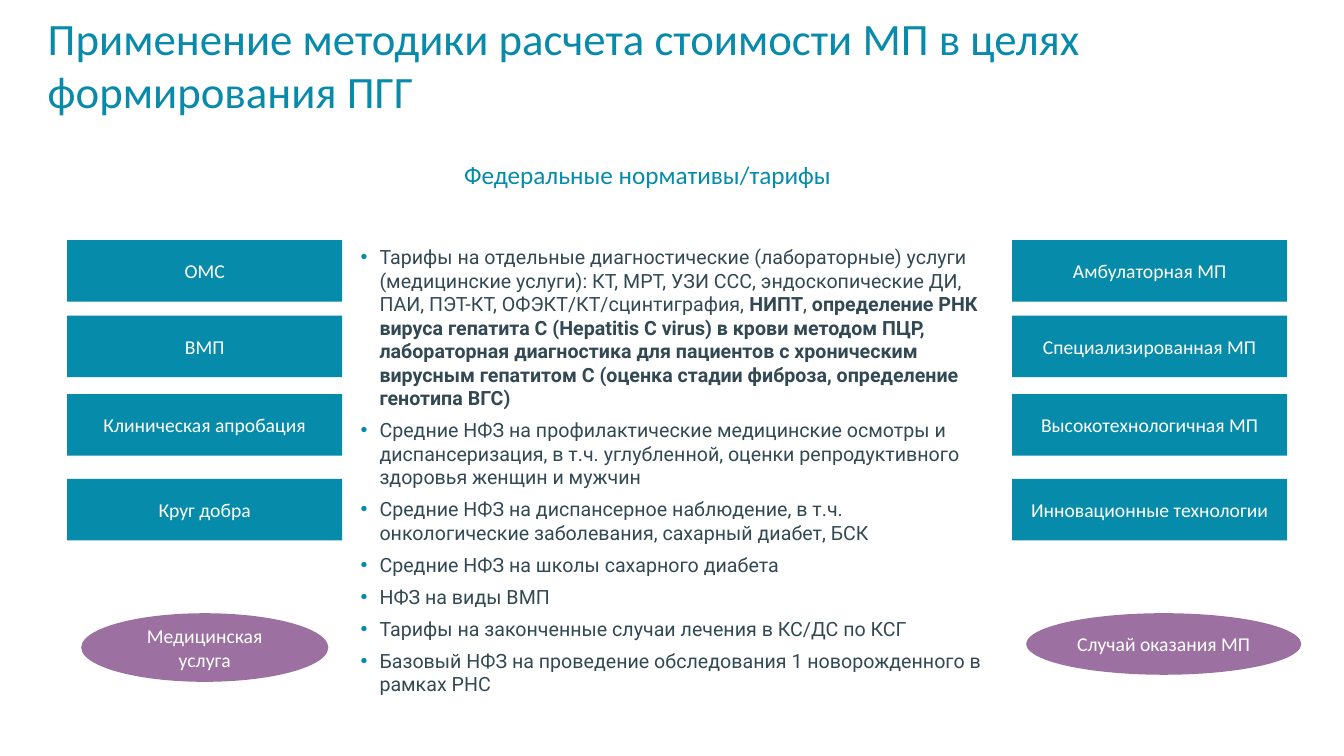
from dataclasses import dataclass

from lxml.etree import SubElement
from pptx import Presentation
from pptx.dml.color import RGBColor
from pptx.enum.shapes import MSO_SHAPE
from pptx.enum.text import MSO_ANCHOR, PP_ALIGN
from pptx.oxml.ns import qn
from pptx.util import Pt


@dataclass(frozen=True)
class Theme:
    title_color: RGBColor = RGBColor(0x08, 0x8A, 0xAB)
    accent: RGBColor = RGBColor(0x06, 0x8B, 0xAA)
    violet: RGBColor = RGBColor(0x9C, 0x71, 0xA2)
    body_color: RGBColor = RGBColor(0x32, 0x49, 0x53)
    white: RGBColor = RGBColor(0xFF, 0xFF, 0xFF)
    heading_font: str = "Calibri"
    body_font: str = "Roboto"
    title_size: int = 32
    subtitle_size: int = 18
    body_size: int = 14


THEME = Theme()

BLOCK_HEIGHT = 44
BLOCK_OFFSETS = (0, 54, 110, 170.5)
PROGRAMS = ("ОМС", "ВМП", "Клиническая апробация", "Круг добра")
CARE_TYPES = (
    "Амбулаторная МП",
    "Специализированная МП",
    "Высокотехнологичная МП",
    "Инновационные технологии",
)

# Each tariff is a list of (text, bold) runs.
TARIFFS = (
    [
        ("Тарифы на отдельные диагностические (лабораторные) услуги "
         "(медицинские услуги): КТ, МРТ, УЗИ ССС, эндоскопические ДИ, "
         "ПАИ, ПЭТ-КТ, ОФЭКТ/КТ/сцинтиграфия, ", False),
        ("НИПТ", True),
        (", ", False),
        ("определение РНК вируса гепатита C (Hepatitis C virus) в крови "
         "методом ПЦР, лабораторная диагностика для пациентов с хроническим "
         "вирусным гепатитом C (оценка стадии фиброза, определение "
         "генотипа ВГС)", True),
    ],
    [("Средние НФЗ на профилактические медицинские осмотры и "
      "диспансеризация, в т.ч. углубленной, оценки репродуктивного "
      "здоровья женщин и мужчин", False)],
    [("Средние НФЗ на диспансерное наблюдение, в т.ч. "
      "онкологические заболевания, сахарный диабет, БСК", False)],
    [("Средние НФЗ на школы сахарного диабета", False)],
    [("НФЗ на виды ВМП", False)],
    [("Тарифы на законченные случаи лечения в КС/ДС по КСГ", False)],
    [("Базовый НФЗ на проведение обследования 1 новорожденного в "
      "рамках РНС", False)],
)


def add_run(paragraph, text, size, color, font_name, bold=False):
    run = paragraph.add_run()
    run.text = text
    run.font.size = Pt(size)
    run.font.name = font_name
    run.font.bold = bold
    run.font.color.rgb = color


def add_text_frame(slide, left, top, width, height, anchor=MSO_ANCHOR.TOP):
    shape = slide.shapes.add_textbox(Pt(left), Pt(top), Pt(width), Pt(height))
    shape.text_frame.word_wrap = True
    shape.text_frame.vertical_anchor = anchor
    return shape.text_frame


def add_heading(slide, text, box, size, color, align, anchor):
    paragraph = add_text_frame(slide, *box, anchor).paragraphs[0]
    paragraph.alignment = align
    add_run(paragraph, text, size, color, THEME.heading_font)


def add_block(slide, kind, text, left, top, width, height, fill):
    shape = slide.shapes.add_shape(
        kind, Pt(left), Pt(top), Pt(width), Pt(height))
    shape.shadow.inherit = False
    shape.fill.solid()
    shape.fill.fore_color.rgb = fill
    shape.line.fill.background()
    frame = shape.text_frame
    frame.word_wrap = True
    frame.vertical_anchor = MSO_ANCHOR.MIDDLE
    paragraph = frame.paragraphs[0]
    paragraph.alignment = PP_ALIGN.CENTER
    add_run(paragraph, text, THEME.body_size, THEME.white, THEME.heading_font)


def add_column(slide, labels, left, top, width):
    for label, offset in zip(labels, BLOCK_OFFSETS):
        add_block(slide, MSO_SHAPE.RECTANGLE, label, left, top + offset,
                  width, BLOCK_HEIGHT, THEME.accent)


def set_bullet(paragraph, indent):
    properties = paragraph._p.get_or_add_pPr()
    properties.set("marL", str(Pt(indent)))
    properties.set("indent", str(-Pt(indent)))
    bullet_color = SubElement(properties, qn("a:buClr"))
    SubElement(bullet_color, qn("a:srgbClr"), val=str(THEME.accent))
    SubElement(properties, qn("a:buFont"), typeface="Arial")
    SubElement(properties, qn("a:buChar"), char="•")


def add_tariff_list(slide, left, top, width, height):
    frame = add_text_frame(slide, left, top, width, height)
    for index, runs in enumerate(TARIFFS):
        paragraph = frame.add_paragraph() if index else frame.paragraphs[0]
        set_bullet(paragraph, 13.5)
        paragraph.space_after = Pt(6)
        for text, bold in runs:
            add_run(paragraph, text, THEME.body_size, THEME.body_color,
                    THEME.body_font, bold)


def main():
    presentation = Presentation()
    presentation.slide_width = Pt(960)
    presentation.slide_height = Pt(540)
    slide = presentation.slides.add_slide(presentation.slide_layouts[6])

    add_heading(slide,
                "Применение методики расчета стоимости МП в целях формирования ПГГ",
                (27, 0, 830, 91.5), THEME.title_size, THEME.title_color,
                PP_ALIGN.LEFT, MSO_ANCHOR.MIDDLE)
    add_heading(slide, "Федеральные нормативы/тарифы",
                (294.5, 110, 336, 51), THEME.subtitle_size, THEME.accent,
                PP_ALIGN.CENTER, MSO_ANCHOR.TOP)
    add_column(slide, PROGRAMS, 48, 171.5, 196.5)
    add_tariff_list(slide, 250.5, 171.5, 467, 346)
    add_column(slide, CARE_TYPES, 723, 171.5, 196.5)
    add_block(slide, MSO_SHAPE.OVAL, "Медицинская услуга",
              58, 438, 176.5, 49, THEME.violet)
    add_block(slide, MSO_SHAPE.OVAL, "Случай оказания МП",
              733, 438, 196.5, BLOCK_HEIGHT, THEME.violet)

    presentation.save("out.pptx")


if __name__ == "__main__":
    main()
